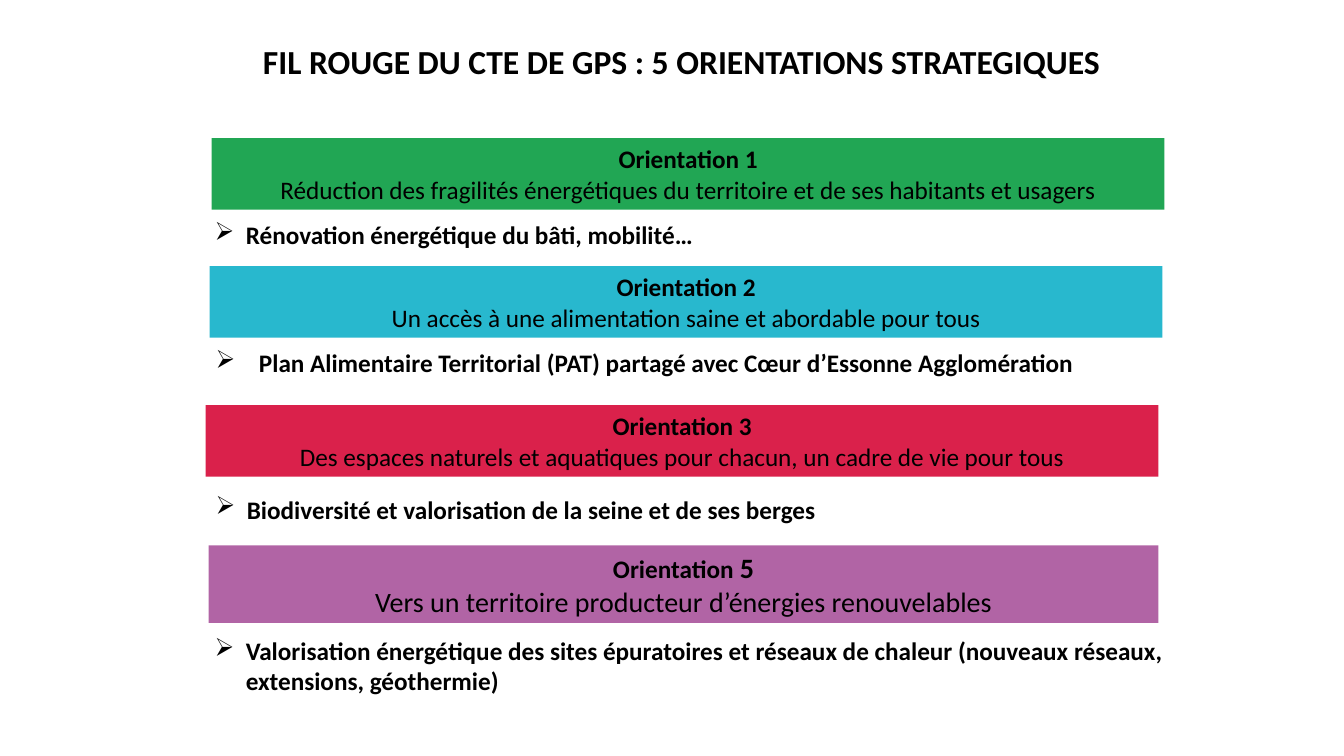
from lxml import etree
from pptx import Presentation
from pptx.dml.color import RGBColor
from pptx.enum.shapes import MSO_SHAPE
from pptx.enum.text import MSO_ANCHOR, MSO_AUTO_SIZE, PP_ALIGN
from pptx.oxml.ns import qn
from pptx.util import Inches, Pt

COLORS = {
    "text": "000000",
    "green": "21A654",
    "blue": "28B8CE",
    "red": "DA214B",
    "purple": "B164A5",
}

# color, box, heading runs, statement, statement size
BANDS = [
    ("green", (2.1, 1.37, 9.45, 0.71), [("Orientation 1", 18)],
     "Réduction des fragilités énergétiques du territoire et de ses habitants et usagers", 18),
    ("blue", (2.08, 2.64, 9.45, 0.71), [("Orientation 2", 18)],
     "Un accès à une alimentation saine et abordable pour tous", 18),
    ("red", (2.04, 4.02, 9.45, 0.71), [("Orientation 3", 18)],
     "Des espaces naturels et aquatiques pour chacun, un cadre de vie pour tous", 18),
    ("purple", (2.07, 5.41, 9.42, 0.77), [("Orientation", 18), (" 5", 20)],
     "Vers un territoire producteur d’énergies renouvelables", 20),
]

# box, bullet indent, lines
ACTIONS = [
    ((2.03, 2.13, 5.57, 0.4), 0.31, ["Rénovation énergétique du bâti, mobilité…"]),
    ((2.04, 3.4, 9.45, 0.71), 0.43,
     ["Plan Alimentaire Territorial (PAT) partagé avec Cœur d’Essonne Agglomération"]),
    ((2.04, 4.85, 6.91, 0.4), 0.31,
     ["Biodiversité et valorisation de la seine et de ses berges"]),
    ((2.03, 6.25, 10.91, 0.71), 0.31,
     ["Valorisation énergétique des sites épuratoires et réseaux de chaleur (nouveaux réseaux,",
      "extensions, géothermie)"]),
]


def add_run(p, text, size, bold=True):
    r = p.add_run()
    r.text = text
    r.font.name = "Calibri"
    r.font.size = Pt(size)
    r.font.bold = bold
    r.font.color.rgb = RGBColor.from_string(COLORS["text"])


def add_title(s, box, text):
    sp = s.shapes.title
    sp.left, sp.top, sp.width, sp.height = map(Inches, box)
    tf = sp.text_frame
    tf.auto_size = MSO_AUTO_SIZE.NONE
    tf.vertical_anchor = MSO_ANCHOR.TOP
    p = tf.paragraphs[0]
    p.alignment = PP_ALIGN.CENTER
    add_run(p, text, 24)


def add_band(s, color, box, heading, statement, size):
    sp = s.shapes.add_shape(MSO_SHAPE.RECTANGLE, *map(Inches, box))
    sp.shadow.inherit = False
    sp.fill.solid()
    sp.fill.fore_color.rgb = RGBColor.from_string(COLORS[color])
    sp.line.fill.background()
    tf = sp.text_frame
    tf.word_wrap = True
    p = tf.paragraphs[0]
    p.alignment = PP_ALIGN.CENTER
    for text, heading_size in heading:
        add_run(p, text, heading_size)
    p = tf.add_paragraph()
    p.alignment = PP_ALIGN.CENTER
    add_run(p, statement, size, bold=False)


def add_action(s, box, indent, lines):
    """Place a bulleted line, with any further lines indented below it."""
    tf = s.shapes.add_textbox(*map(Inches, box)).text_frame
    tf.word_wrap = True
    for i, line in enumerate(lines):
        p = tf.add_paragraph() if i else tf.paragraphs[0]
        pPr = p._p.get_or_add_pPr()
        pPr.set("marL", str(Inches(indent)))
        if i == 0:
            pPr.set("indent", str(-Inches(indent)))
            etree.SubElement(pPr, qn("a:buChar")).set("char", "➢")
        add_run(p, line, 18)


def main():
    prs = Presentation()
    prs.slide_width, prs.slide_height = Inches(13.33), Inches(7.5)
    s = prs.slides.add_slide(prs.slide_layouts[5])
    add_title(s, (2.06, 0.36, 9.4, 0.91),
              "FIL ROUGE DU CTE DE GPS : 5 ORIENTATIONS STRATEGIQUES")
    for band, action in zip(BANDS, ACTIONS):
        add_band(s, *band)
        add_action(s, *action)
    prs.save("out.pptx")


if __name__ == "__main__":
    main()
